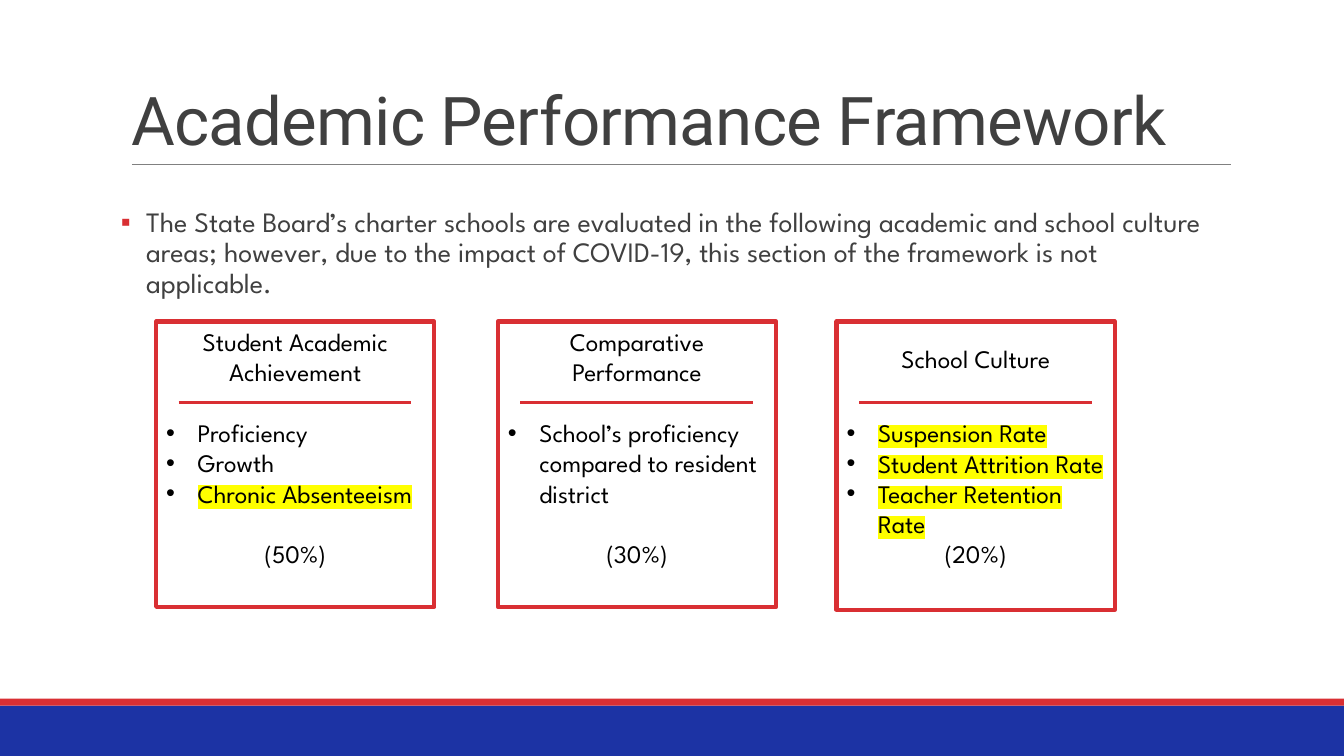
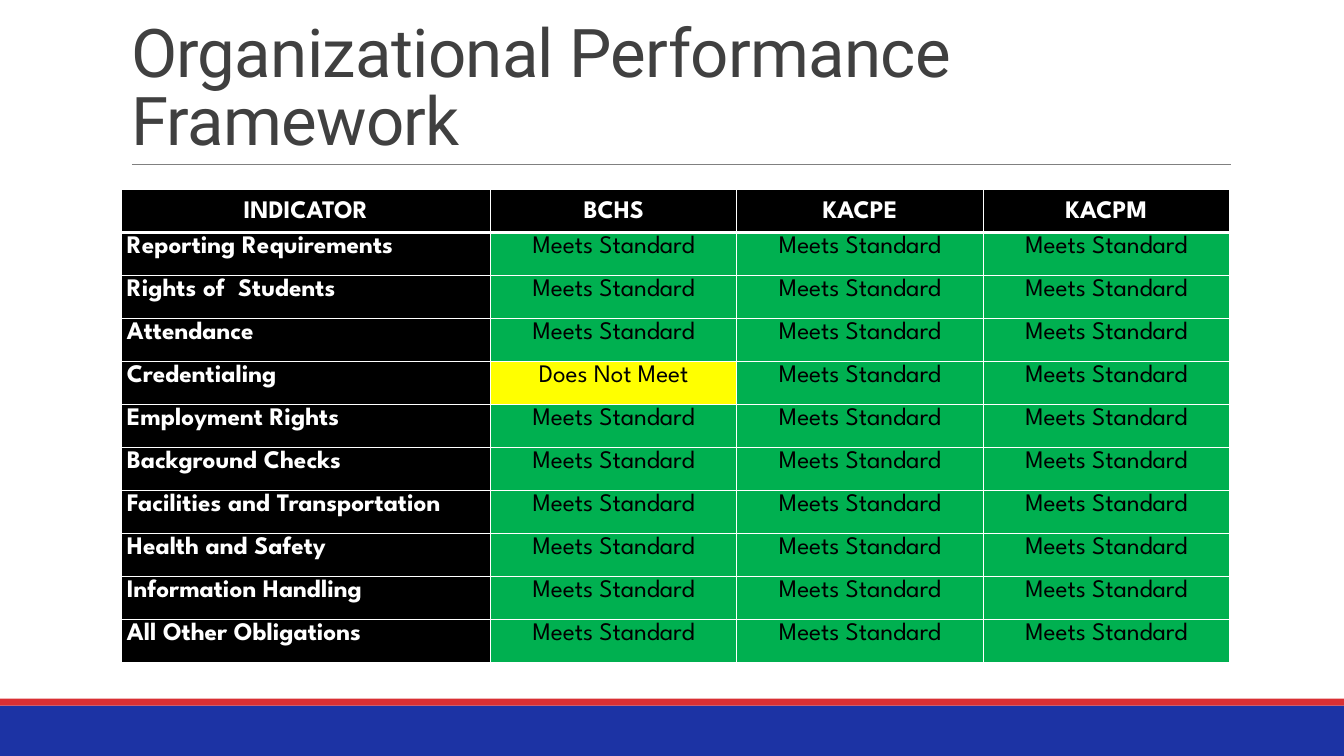
from lxml import etree
from pptx import Presentation
from pptx.dml.color import RGBColor
from pptx.enum.shapes import MSO_CONNECTOR, MSO_SHAPE
from pptx.enum.text import MSO_ANCHOR, MSO_AUTO_SIZE, PP_ALIGN
from pptx.oxml.ns import qn
from pptx.util import Pt

LEFT, CENTER = PP_ALIGN.LEFT, PP_ALIGN.CENTER
TOP, MIDDLE, BOTTOM = MSO_ANCHOR.TOP, MSO_ANCHOR.MIDDLE, MSO_ANCHOR.BOTTOM
RECT, STRAIGHT = MSO_SHAPE.RECTANGLE, MSO_CONNECTOR.STRAIGHT

# Shared style, lengths in points
W, H = 960, 540
MARGIN, CONTENT_W = 86.4, 792
RED, BLUE, GREY, INK = "D92F33", "1C33A4", "808080", "404040"
BLACK, WHITE, GREEN, YELLOW = "000000", "FFFFFF", "00B050", "FFFF00"
HEAD_FONT, BODY_FONT = "Roboto", "League Spartan"
LINE = 21.7  # height of one 18 pt line of body text

# (heading, inset above it, gap below it, bullets, gap above share, share, height)
CARDS = [
    ("Student Academic Achievement", 3.6, LINE,
     [("Proficiency", None), ("Growth", None), ("Chronic Absenteeism", YELLOW)],
     LINE, "(50%)", 203.8),
    ("Comparative Performance", 3.6, LINE,
     [("School’s proficiency compared to resident district", None)],
     LINE, "(30%)", 203.8),
    ("School Culture", 15.7, 31.3,
     [("Suspension Rate", YELLOW), ("Student Attrition Rate", YELLOW),
      ("Teacher Retention Rate", YELLOW)],
     0, "(20%)", 205.9),
]
CARD_LEFTS = [111.6, 355.7, 597.6]

SCHOOLS = ["BCHS", "KACPE", "KACPM"]
INDICATORS = [
    "Reporting Requirements", "Rights of  Students", "Attendance",
    "Credentialing", "Employment Rights", "Background Checks",
    "Facilities and Transportation", "Health and Safety",
    "Information Handling", "All Other Obligations",
]
MEETS, FAILS = "Meets Standard", "Does Not Meet"
NOT_MET = {("Credentialing", "BCHS")}


def rgb(color):
    return RGBColor.from_string(color)


def sub(parent, tag, **attrs):
    return etree.SubElement(parent, qn(tag), attrs)


def add_text(p, text, size=18, color=BLACK, font=BODY_FONT, bold=False,
             align=LEFT, spacing=None, before=0, highlight=None, track=None):
    """Write one formatted run into paragraph p."""
    p.alignment, p.space_before = align, Pt(before)
    if spacing:
        p.line_spacing = spacing
    r = p.add_run()
    r.text = text
    r.font.size, r.font.bold = Pt(size), bold
    r.font.color.rgb = rgb(color)
    rPr = r.font._element
    if highlight:
        sub(sub(rPr, "a:highlight"), "a:srgbClr", val=highlight)
    if track is not None:
        rPr.set("spc", str(int(track * 100)))
    r.font.name = font


def add_bullet(p, char, indent, color=None):
    pPr = p._p.get_or_add_pPr()
    pPr.set("marL", str(Pt(indent)))
    pPr.set("indent", str(-Pt(indent)))
    if color:
        sub(sub(pPr, "a:buClr"), "a:srgbClr", val=color)
    sub(pPr, "a:buFont", typeface="Arial")
    sub(pPr, "a:buChar", char=char)


def add_rect(s, x, y, w, h, fill=None, line=None, line_w=1):
    sp = s.shapes.add_shape(RECT, Pt(x), Pt(y), Pt(w), Pt(h))
    sp.shadow.inherit = False
    if fill:
        sp.fill.solid()
        sp.fill.fore_color.rgb = rgb(fill)
    else:
        sp.fill.background()
    if line:
        sp.line.color.rgb = rgb(line)
        sp.line.width = Pt(line_w)
    else:
        sp.line.fill.background()
    return sp


def add_rule(s, x, y, w, color, width):
    ln = s.shapes.add_connector(STRAIGHT, Pt(x), Pt(y), Pt(x + w), Pt(y))
    ln.line.color.rgb = rgb(color)
    ln.line.width = Pt(width)
    sub(ln._element.spPr, "a:effectLst")


def base_slide(prs, title):
    """Title, rule below it and the two footer bands."""
    s = prs.slides.add_slide(prs.slide_layouts[5])
    add_rect(s, 0, 504, W, 36, fill=BLUE)
    add_rect(s, 0, 499, W, 5, fill=RED)
    add_rule(s, 94.3, 117.4, 784.8, GREY, 0.5)
    sp = s.shapes.title
    sp.left, sp.top = Pt(MARGIN), Pt(2.9)
    sp.width, sp.height = Pt(CONTENT_W), Pt(114.5)
    tf = sp.text_frame
    tf.auto_size, tf.word_wrap = MSO_AUTO_SIZE.NONE, True
    tf.vertical_anchor = BOTTOM
    add_text(tf.paragraphs[0], title, size=48, color=INK, font=HEAD_FONT,
             spacing=0.85, track=-0.5)
    return s


def add_intro(s, text, x, y, w, h):
    tf = s.shapes.add_textbox(Pt(x), Pt(y), Pt(w), Pt(h)).text_frame
    tf.word_wrap = True
    tf.margin_left = tf.margin_right = 0
    p = tf.paragraphs[0]
    add_text(p, text, size=20, color=INK, spacing=0.9)
    add_bullet(p, "▪", 18, RED)


def add_card(s, x, y, w, card):
    """Outlined box: heading, divider, bullets and share."""
    heading, inset, gap, bullets, share_gap, share, h = card
    tf = add_rect(s, x, y, w, h, line=RED, line_w=3).text_frame
    tf.word_wrap, tf.vertical_anchor = True, TOP
    tf.margin_top = Pt(inset)
    add_text(tf.paragraphs[0], heading, align=CENTER)
    for i, (text, highlight) in enumerate(bullets):
        p = tf.add_paragraph()
        add_text(p, text, before=0 if i else gap, highlight=highlight)
        add_bullet(p, "•", 22.5)
    add_text(tf.add_paragraph(), share, align=CENTER, before=share_gap)
    add_rule(s, x + 16, y + 57.6, w - 32.4, RED, 2.25)


def format_cell(cell, text, fill, color, bold, align, anchor, top, bottom):
    """Fill, white borders and text of one table cell."""
    cell.margin_left = cell.margin_right = Pt(4.3)
    cell.margin_top = cell.margin_bottom = 0
    cell.vertical_anchor = anchor
    tcPr = cell._tc.get_or_add_tcPr()
    for side, width in (("L", 1), ("R", 1), ("T", top), ("B", bottom)):
        ln = sub(tcPr, f"a:ln{side}", w=str(Pt(width)))
        sub(sub(ln, "a:solidFill"), "a:srgbClr", val=WHITE)
    cell.fill.solid()
    cell.fill.fore_color.rgb = rgb(fill)
    add_text(cell.text_frame.paragraphs[0], text, color=color, bold=bold,
             align=align, spacing=1.15)


def add_ratings(s, x, y, w, h):
    """Table of indicators against schools."""
    rows, cols = len(INDICATORS) + 1, len(SCHOOLS) + 1
    table = s.shapes.add_table(rows, cols, Pt(x), Pt(y), Pt(w), Pt(h)).table
    for c, col in enumerate(table.columns):
        col.width = Pt(w * (2 / 9 if c else 1 / 3))
    for row in table.rows:
        row.height = Pt(h / rows)
    for c, text in enumerate(["INDICATOR"] + SCHOOLS):
        format_cell(table.cell(0, c), text, BLACK, WHITE, True, CENTER,
                    MIDDLE, 1, 3)
    for i, indicator in enumerate(INDICATORS, 1):
        top = 3 if i == 1 else 1
        format_cell(table.cell(i, 0), indicator, BLACK, WHITE, True, LEFT,
                    TOP, top, 1)
        for c, school in enumerate(SCHOOLS, 1):
            failed = (indicator, school) in NOT_MET
            text, fill = (FAILS, YELLOW) if failed else (MEETS, GREEN)
            format_cell(table.cell(i, c), text, fill, BLACK, False, CENTER,
                        TOP, top, 1)


def academic_slide(prs):
    s = base_slide(prs, "Academic Performance Framework")
    add_intro(s, "The State Board’s charter schools are evaluated in the "
              "following academic and school culture areas; however, due to "
              "the impact of COVID-19, this section of the framework is not "
              "applicable.", MARGIN, 145.4, CONTENT_W, 76)
    for x, card in zip(CARD_LEFTS, CARDS):
        add_card(s, x, 229.7, 198.7, card)


def organizational_slide(prs):
    s = base_slide(prs, "Organizational Performance Framework")
    add_ratings(s, MARGIN, 135.4, CONTENT_W, 337.7)


def main():
    prs = Presentation()
    prs.slide_width, prs.slide_height = Pt(W), Pt(H)
    academic_slide(prs)
    organizational_slide(prs)
    prs.save("out.pptx")


if __name__ == "__main__":
    main()
